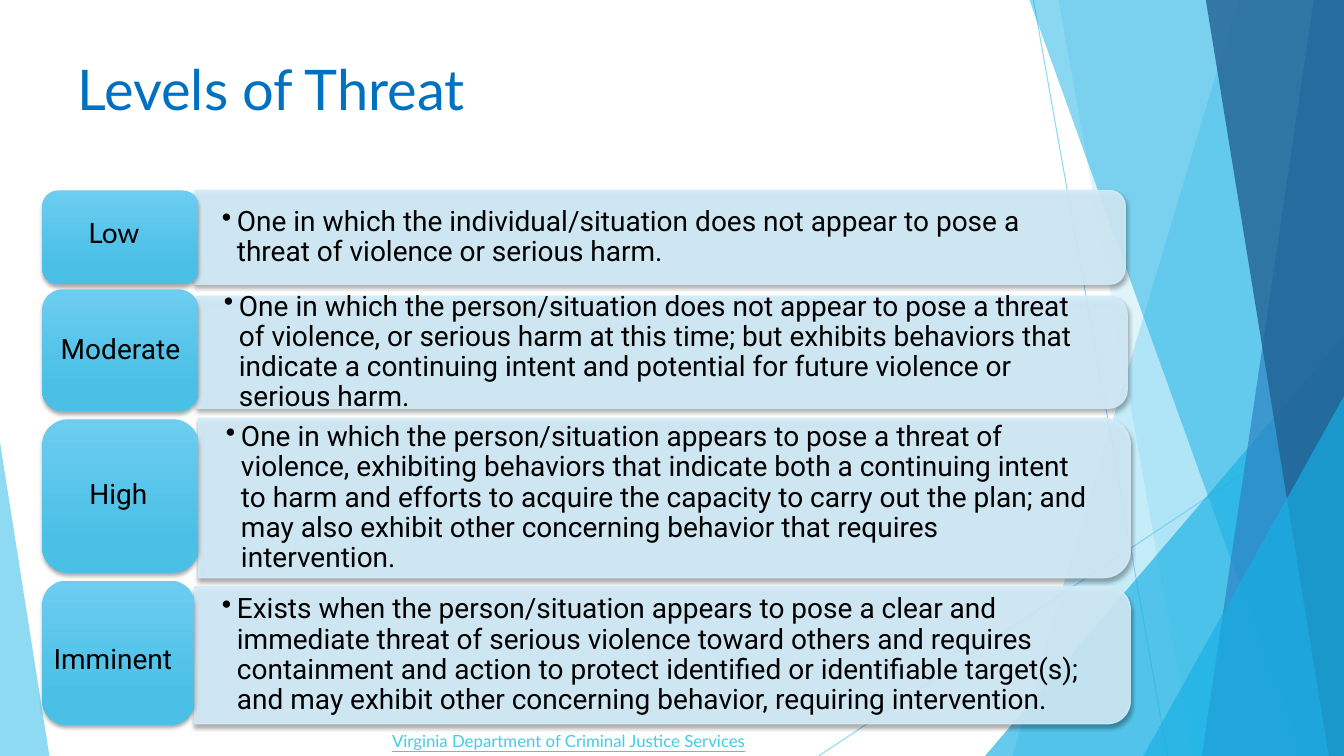
from lxml.etree import SubElement
from pptx import Presentation
from pptx.dml.color import RGBColor
from pptx.enum.shapes import MSO_CONNECTOR, MSO_SHAPE
from pptx.enum.text import MSO_ANCHOR, MSO_AUTO_SIZE, PP_ALIGN
from pptx.oxml.ns import qn
from pptx.util import Inches, Pt

WIDTH, HEIGHT = 13.33, 7.5
SKY, CYAN, BLUE, NAVY = "5FCBEF", "17B0E4", "2E83C3", "226292"
PALE, BLACK = "D2ECF9", "000000"

# Label, label font, label margins (right, bottom, top), label box, bar box, description
LEVELS = [
    ("Low", "Lato", (0.13, 0.05, 0), (0.42, 1.89, 1.55, 0.93), (1.93, 1.89, 9.23, 0.93),
     "One in which the individual/situation does not appear to pose a threat of violence "
     "or serious harm."),
    ("Moderate", "Roboto", (0, 0, 0), (0.42, 2.87, 1.55, 1.21), (1.95, 2.94, 9.23, 1.11),
     "One in which the person/situation does not appear to pose a threat of violence, "
     "or serious harm at this time; but exhibits behaviors that indicate a continuing "
     "intent and potential for future violence or serious harm."),
    ("High", "Roboto", (0.04, 0, 0), (0.42, 4.16, 1.55, 1.52), (1.97, 4.15, 9.24, 1.58),
     "One in which the person/situation appears to pose a threat of violence, exhibiting "
     "behaviors that indicate both a continuing intent to harm and efforts to acquire the "
     "capacity to carry out the plan; and may also exhibit other concerning behavior that "
     "requires intervention."),
    ("Imminent", "Roboto", (0.11, 0, 0.15), (0.42, 5.76, 1.51, 1.43), (1.93, 5.82, 9.28, 1.36),
     "Exists when the person/situation appears to pose a clear and immediate threat of "
     "serious violence toward others and requires containment and action to protect "
     "identified or identifiable target(s); and may exhibit other concerning behavior, "
     "requiring intervention."),
]


def color(value):
    return RGBColor.from_string(value)


def inches(*lengths):
    return [Inches(length) for length in lengths]


def add_alpha(properties, percent):
    """Make every solid colour inside the shape properties translucent."""
    for element in properties.iter(qn("a:srgbClr")):
        SubElement(element, qn("a:alpha"), val=str(percent * 1000))


def fill_plain(shape, value, percent):
    shape.shadow.inherit = False
    shape.fill.solid()
    shape.fill.fore_color.rgb = color(value)
    shape.line.fill.background()
    add_alpha(shape._element.spPr, percent)


def add_soft_shadow(shape):
    shape.shadow.inherit = False
    effects = shape._element.spPr.find(qn("a:effectLst"))
    shadow = SubElement(effects, qn("a:outerShdw"), blurRad=str(Pt(3)), dist=str(Pt(2)),
                        dir="5400000", algn="ctr", rotWithShape="0")
    shadow_color = SubElement(shadow, qn("a:srgbClr"), val=BLACK)
    SubElement(shadow_color, qn("a:alpha"), val="35000")


def add_text(paragraph, text, size, font, value):
    run = paragraph.add_run()
    run.text = text
    run.font.size = Pt(size)
    run.font.name = font
    run.font.color.rgb = color(value)
    return run


def set_margins(frame, left, top, right, bottom):
    frame.margin_left, frame.margin_top, frame.margin_right, frame.margin_bottom = inches(
        left, top, right, bottom)


def add_thin_line(slide, start, end):
    line = slide.shapes.add_connector(MSO_CONNECTOR.STRAIGHT, *inches(*start, *end))
    line.line.color.rgb = color(SKY)
    line.line.width = Pt(0.75)
    properties = line._element.spPr
    add_alpha(properties, 70)
    SubElement(properties, qn("a:effectLst"))


def add_band(slide, top_left, bottom_left, value, percent):
    """Fill the area between a slanted left edge and the right edge of the slide."""
    builder = slide.shapes.build_freeform(*inches(top_left, 0), scale=1.0)
    corners = [(WIDTH, 0), (WIDTH, HEIGHT), (bottom_left, HEIGHT)]
    builder.add_line_segments([inches(*corner) for corner in corners], close=True)
    fill_plain(builder.convert_to_shape(), value, percent)


def add_triangle(slide, box, apex, value, percent):
    triangle = slide.shapes.add_shape(MSO_SHAPE.ISOSCELES_TRIANGLE, *inches(*box))
    triangle.adjustments[0] = apex
    fill_plain(triangle, value, percent)


def add_backdrop(slide):
    add_thin_line(slide, (10.25, 0), (11.58, HEIGHT))
    add_thin_line(slide, (WIDTH, 4.03), (8.12, HEIGHT))
    add_band(slide, 12.28, 10.04, SKY, 36)
    add_band(slide, 10.5, 11.83, SKY, 20)
    add_triangle(slide, (9.77, 3.33, 3.56, 4.17), 1, CYAN, 66)
    add_band(slide, 10.21, 12.91, CYAN, 50)
    add_band(slide, 13.03, 11.92, BLUE, 70)
    add_band(slide, 11.96, 13.18, NAVY, 80)
    add_triangle(slide, (11.34, 3.93, 1.99, 3.57), 1, CYAN, 66)
    add_triangle(slide, (0, 4.39, 0.49, 3.11), 0, SKY, 70)


def add_bar(slide, box):
    """Draw a bar with rounded right corners: an upright shape turned by 90 degrees."""
    left, top, width, height = box
    shift = (width - height) / 2
    bar = slide.shapes.add_shape(MSO_SHAPE.ROUND_2_SAME_RECTANGLE,
                                 *inches(left + shift, top - shift, height, width))
    bar.rotation = 90
    bar.fill.solid()
    bar.fill.fore_color.rgb = color(PALE)
    bar.line.color.rgb = color(PALE)
    bar.line.width = Pt(1)
    add_alpha(bar._element.spPr, 90)
    add_soft_shadow(bar)


def add_description(slide, box, text):
    left, top, width, height = box
    inset = 0.05 * height
    shape = slide.shapes.add_textbox(
        *inches(left, top + inset, width - inset, height - 2 * inset))
    frame = shape.text_frame
    frame.word_wrap = True
    frame.vertical_anchor = MSO_ANCHOR.MIDDLE
    set_margins(frame, 0.27, 0.14, 0.27, 0.14)
    paragraph = frame.paragraphs[0]
    paragraph.line_spacing = 0.9
    properties = paragraph._p.get_or_add_pPr()
    properties.set("marL", str(Inches(0.15)))
    properties.set("indent", str(-Inches(0.15)))
    SubElement(properties, qn("a:buChar"), char="•")
    add_text(paragraph, text, 20, "Roboto", BLACK)


def add_label(slide, box, text, font, margins):
    label = slide.shapes.add_shape(MSO_SHAPE.ROUNDED_RECTANGLE, *inches(*box))
    label.fill.gradient()
    label.fill.gradient_angle = 270
    for stop, position, value in zip(label.fill.gradient_stops, (0, 0.78), ("6CCDF0", "4BC0E6")):
        stop.position = position
        stop.color.rgb = color(value)
    label.line.fill.background()
    add_soft_shadow(label)
    frame = label.text_frame
    frame.word_wrap = True
    frame.vertical_anchor = MSO_ANCHOR.MIDDLE
    right, bottom, top = margins
    set_margins(frame, 0, top, right, bottom)
    paragraph = frame.paragraphs[0]
    paragraph.alignment = PP_ALIGN.CENTER
    paragraph.line_spacing = 0.9
    add_text(paragraph, text, 20, font, BLACK)


def add_title(slide, box):
    title = slide.shapes.title
    title.left, title.top, title.width, title.height = inches(*box)
    frame = title.text_frame
    frame.auto_size = MSO_AUTO_SIZE.NONE
    frame.vertical_anchor = MSO_ANCHOR.TOP
    paragraph = frame.paragraphs[0]
    paragraph.alignment = PP_ALIGN.LEFT
    add_text(paragraph, "Levels of Threat", 40, "Lato", "0070C0")


def add_source_line(slide, box):
    frame = slide.shapes.add_textbox(*inches(*box)).text_frame
    frame.word_wrap = False
    run = add_text(frame.paragraphs[0], "Virginia Department of Criminal Justice Services",
                   12, "Lato", "3FCDE7")
    run.font.underline = True


def main():
    presentation = Presentation()
    presentation.slide_width, presentation.slide_height = inches(WIDTH, HEIGHT)
    slide = presentation.slides.add_slide(presentation.slide_layouts[5])
    add_backdrop(slide)
    for label, font, margins, label_box, bar_box, description in LEVELS:
        add_bar(slide, bar_box)
        add_description(slide, bar_box, description)
        add_label(slide, label_box, label, font, margins)
    add_title(slide, (0.67, 0.49, 9.4, 0.79))
    add_source_line(slide, (3.79, 7.2, 3.84, 0.3))
    presentation.save("out.pptx")


if __name__ == "__main__":
    main()
